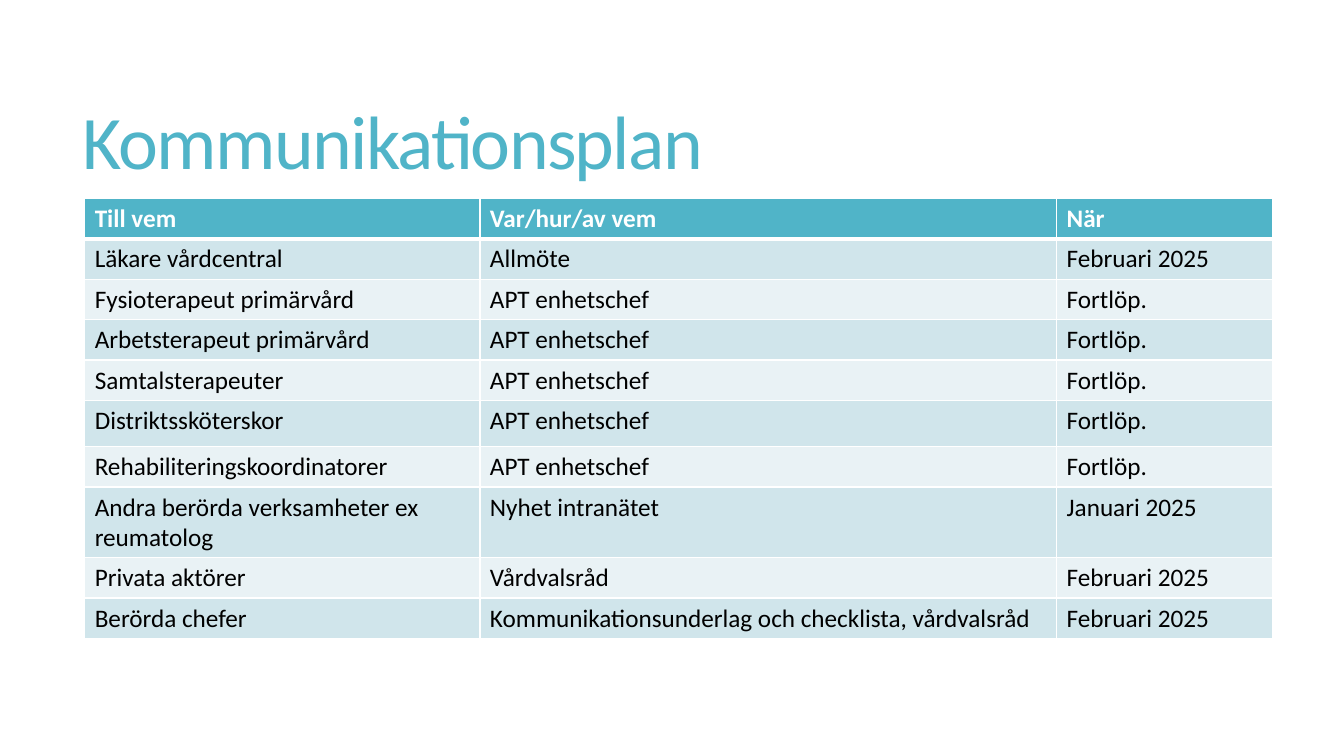
from dataclasses import dataclass

from lxml import etree
from pptx import Presentation
from pptx import util as u
from pptx.dml.color import RGBColor
from pptx.enum import text
from pptx.oxml import ns


@dataclass(frozen=True)
class Theme:
    """Colours and type sizes of the slide."""
    font: str = "Calibri"
    accent: str = "50B4C8"
    band_dark: str = "D0E5EB"
    band_light: str = "E9F2F5"
    white: str = "FFFFFF"
    black: str = "000000"
    title_size: float = 54
    table_size: float = 18
    border: float = 1
    header_border: float = 3


@dataclass(frozen=True)
class Activity:
    """One row of the communication plan."""
    audience: str
    channel: str
    timing: str
    height: float = 0.4


THEME = Theme()
COLUMN_WIDTHS = (3.92, 5.72, 2.14)
ACTIVITIES = (
    Activity("Till vem", "Var/hur/av vem", "När"),
    Activity("Läkare vårdcentral", "Allmöte", "Februari 2025"),
    Activity("Fysioterapeut primärvård", "APT enhetschef", "Fortlöp."),
    Activity("Arbetsterapeut primärvård", "APT enhetschef", "Fortlöp."),
    Activity("Samtalsterapeuter", "APT enhetschef", "Fortlöp."),
    Activity("Distriktssköterskor", "APT enhetschef", "Fortlöp.", 0.46),
    Activity("Rehabiliteringskoordinatorer", "APT enhetschef", "Fortlöp."),
    Activity("Andra berörda verksamheter ex reumatolog", "Nyhet intranätet", "Januari 2025"),
    Activity("Privata aktörer", "Vårdvalsråd", "Februari 2025"),
    Activity("Berörda chefer", "Kommunikationsunderlag och checklista, vårdvalsråd", "Februari 2025"),
)


def write_text(paragraph, words: str, size: float, color: str, bold: bool = False):
    """Add one formatted run and return it."""
    run = paragraph.add_run()
    run.text = words
    formats = {"name": THEME.font, "size": u.Pt(size), "bold": bold}
    for name, value in formats.items():
        setattr(run.font, name, value)
    run.font.color.rgb = RGBColor.from_string(color)
    return run


def add_title(slide, words: str) -> None:
    """Add the slide title."""
    shape = slide.shapes.add_textbox(u.Inches(0.72), u.Inches(0.55), u.Inches(11.78), u.Inches(1.81))
    formats = {"word_wrap": True, "vertical_anchor": text.MSO_ANCHOR.MIDDLE}
    for name, value in formats.items():
        setattr(shape.text_frame, name, value)
    paragraph = shape.text_frame.paragraphs[0]
    paragraph.line_spacing = 0.85
    run = write_text(paragraph, words, THEME.title_size, THEME.accent)
    run.font._element.set("spc", "-120")


def add_border(cell, side: str, width: float) -> None:
    """Draw a white line along one side of a cell."""
    properties = cell._tc.get_or_add_tcPr()
    line = etree.SubElement(properties, ns.qn(f"a:ln{side}"), w=str(u.Pt(width)))
    fill = etree.SubElement(line, ns.qn("a:solidFill"))
    etree.SubElement(fill, ns.qn("a:srgbClr"), val=THEME.white)


def format_cell(cell, words: str, row_index: int) -> None:
    """Fill a cell according to its row."""
    header = row_index == 0
    widths = {
        "L": THEME.border,
        "R": THEME.border,
        "T": THEME.header_border if row_index == 1 else THEME.border,
        "B": THEME.header_border if header else THEME.border,
    }
    for side, width in widths.items():
        add_border(cell, side, width)
    band = THEME.band_dark if row_index % 2 else THEME.band_light
    cell.fill.solid()
    cell.fill.fore_color.rgb = RGBColor.from_string(THEME.accent if header else band)
    color = THEME.white if header else THEME.black
    write_text(cell.text_frame.paragraphs[0], words, THEME.table_size, color, header)


def add_plan(slide, activities: tuple[Activity, ...]) -> None:
    """Add the communication plan table."""
    height = sum(activity.height for activity in activities)
    table = slide.shapes.add_table(
        len(activities), len(COLUMN_WIDTHS), u.Inches(0.84), u.Inches(1.97),
        u.Inches(sum(COLUMN_WIDTHS)), u.Inches(height),
    ).table
    for column, width in zip(table.columns, COLUMN_WIDTHS):
        column.width = u.Inches(width)
    for row_index, activity in enumerate(activities):
        row = table.rows[row_index]
        row.height = u.Inches(activity.height)
        values = (activity.audience, activity.channel, activity.timing)
        for cell, words in zip(row.cells, values):
            format_cell(cell, words, row_index)


def main() -> None:
    """Build and save the presentation."""
    presentation = Presentation()
    presentation.slide_width = u.Inches(13.33)
    presentation.slide_height = u.Inches(7.5)
    slide = presentation.slides.add_slide(presentation.slide_layouts[6])
    add_title(slide, "Kommunikationsplan")
    add_plan(slide, ACTIVITIES)
    presentation.save("out.pptx")


if __name__ == "__main__":
    main()
